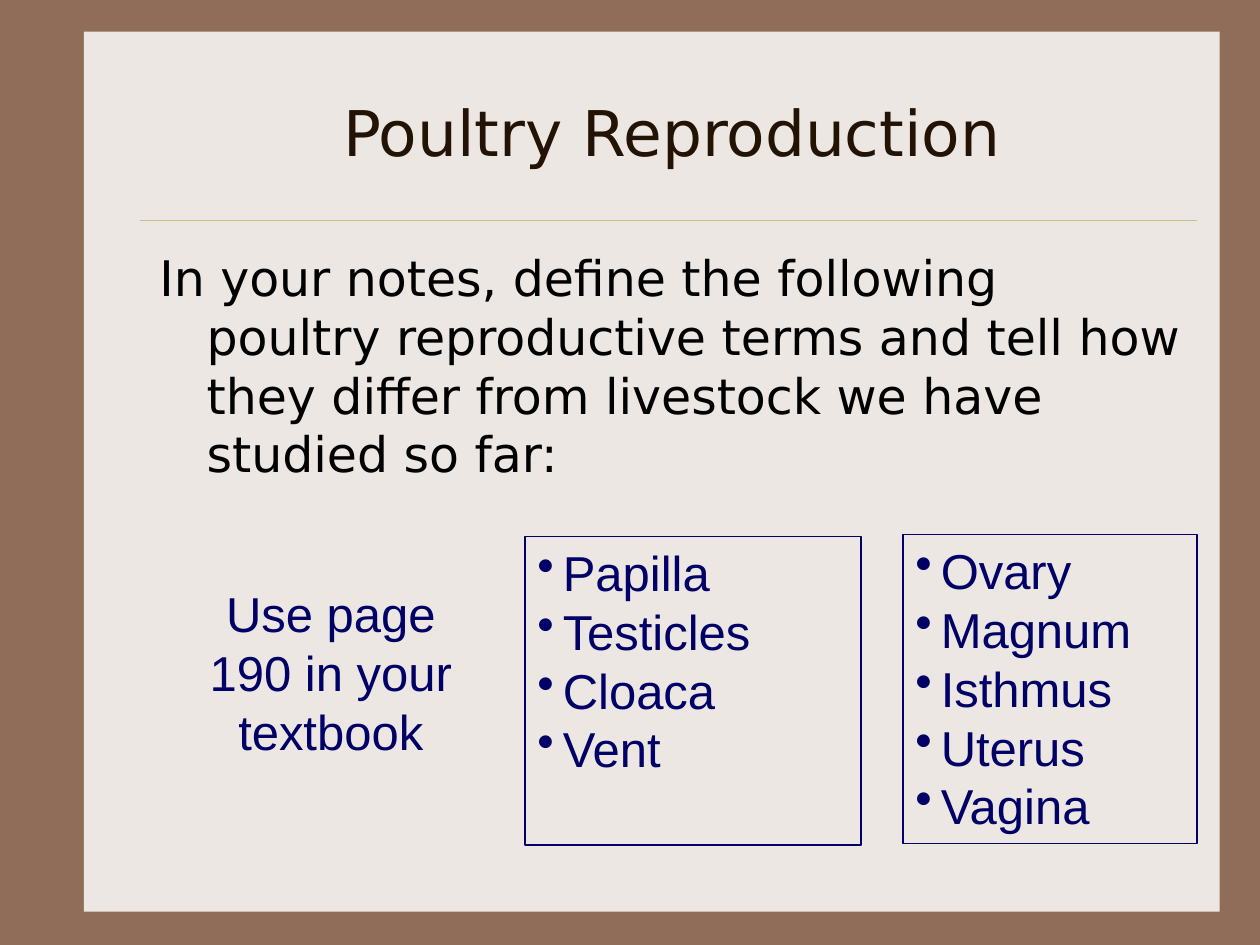
from dataclasses import dataclass

import pptx
import pptx.dml.color
import pptx.enum.shapes
import pptx.enum.text
import pptx.oxml.ns
import pptx.slide
import pptx.util
from lxml import etree

Pt = pptx.util.Pt
ALIGN = pptx.enum.text.PP_ALIGN
ANCHOR = pptx.enum.text.MSO_ANCHOR
NAVY = "000066"
LINE_PITCH = 1.2


@dataclass
class Box:
    left: float
    top: float
    width: float
    height: float

    def lengths(self) -> list:
        return [Pt(value) for value in (self.left, self.top, self.width, self.height)]


@dataclass
class TermList:
    box: Box
    terms: list[str]


def color(hex_code: str) -> pptx.dml.color.RGBColor:
    return pptx.dml.color.RGBColor.from_string(hex_code)


def add_text(slide: pptx.slide.Slide, box: Box, lines: list[str], *, size=28,
             font="Arial", ink=NAVY, align=ALIGN.LEFT, anchor=ANCHOR.TOP,
             hanging=0, bullet=None, outline=None):
    """Add a text box with one paragraph for each line."""
    shape = slide.shapes.add_textbox(*box.lengths())
    if outline:
        shape.line.color.rgb = color(outline)
        shape.line.width = Pt(0.75)
    frame = shape.text_frame
    frame.word_wrap = True
    frame.vertical_anchor = anchor
    for index, line in enumerate(lines):
        paragraph = frame.paragraphs[0] if index == 0 else frame.add_paragraph()
        properties = paragraph._p.get_or_add_pPr()
        if hanging:
            properties.set("marL", str(Pt(hanging)))
            properties.set("indent", str(-Pt(hanging)))
        if bullet:
            mark = etree.SubElement(properties, pptx.oxml.ns.qn("a:buChar"))
            mark.set("char", bullet)
        paragraph.alignment = align
        paragraph.line_spacing = Pt(size * LINE_PITCH)
        paragraph.font.size = Pt(size)
        paragraph.font.name = font
        paragraph.font.color.rgb = color(ink)
        run = paragraph.add_run()
        run.text = line
        run.font.size = Pt(size)
        run.font.name = font
        run.font.color.rgb = color(ink)
    return shape


def add_panel(slide: pptx.slide.Slide, box: Box, fill: str) -> None:
    panel = slide.shapes.add_shape(
        pptx.enum.shapes.MSO_SHAPE.RECTANGLE, *box.lengths())
    panel.shadow.inherit = False
    panel.fill.solid()
    panel.fill.fore_color.rgb = color(fill)
    panel.line.fill.background()


def add_rule(slide: pptx.slide.Slide, left: float, right: float, top: float,
             ink: str) -> None:
    rule = slide.shapes.add_connector(
        pptx.enum.shapes.MSO_CONNECTOR.STRAIGHT, Pt(left), Pt(top), Pt(right), Pt(top))
    rule.line.color.rgb = color(ink)
    rule.line.width = Pt(0.25)
    etree.SubElement(rule._element.spPr, pptx.oxml.ns.qn("a:effectLst"))


TERM_LISTS = [
    TermList(Box(300, 306.5, 192, 176.4), ["Papilla", "Testicles", "Cloaca", "Vent"]),
    TermList(Box(516, 305.5, 168, 176.4),
             ["Ovary", "Magnum", "Isthmus", "Uterus", "Vagina"]),
]


def main() -> None:
    presentation = pptx.Presentation()
    presentation.slide_width = Pt(720)
    presentation.slide_height = Pt(540)
    slide = presentation.slides.add_slide(presentation.slide_layouts[6])

    # Background, panel and rule
    slide.background.fill.solid()
    slide.background.fill.fore_color.rgb = color("906D58")
    add_panel(slide, Box(48, 18, 649, 503), "EDE7E3")
    add_rule(slide, 80, 684, 126, "CBBD83")

    # Title and instruction
    add_text(slide, Box(84, 30, 600, 90), ["Poultry Reproduction"], size=36,
             font="DejaVu Sans", ink="221304", align=ALIGN.CENTER,
             anchor=ANCHOR.MIDDLE)
    add_text(slide, Box(84, 138, 600, 125),
             ["In your notes, define the following poultry reproductive terms "
              "and tell how they differ from livestock we have studied so far:"],
             font="DejaVu Sans", ink="000000", hanging=27)

    # Terms to define
    for term_list in TERM_LISTS:
        add_text(slide, term_list.box, term_list.terms, hanging=14.5,
                 bullet="•", outline=NAVY)

    # Textbook reference
    add_text(slide, Box(96, 330, 186, 108), ["Use page 190 in your textbook"],
             align=ALIGN.CENTER)

    presentation.save("out.pptx")


if __name__ == "__main__":
    main()
